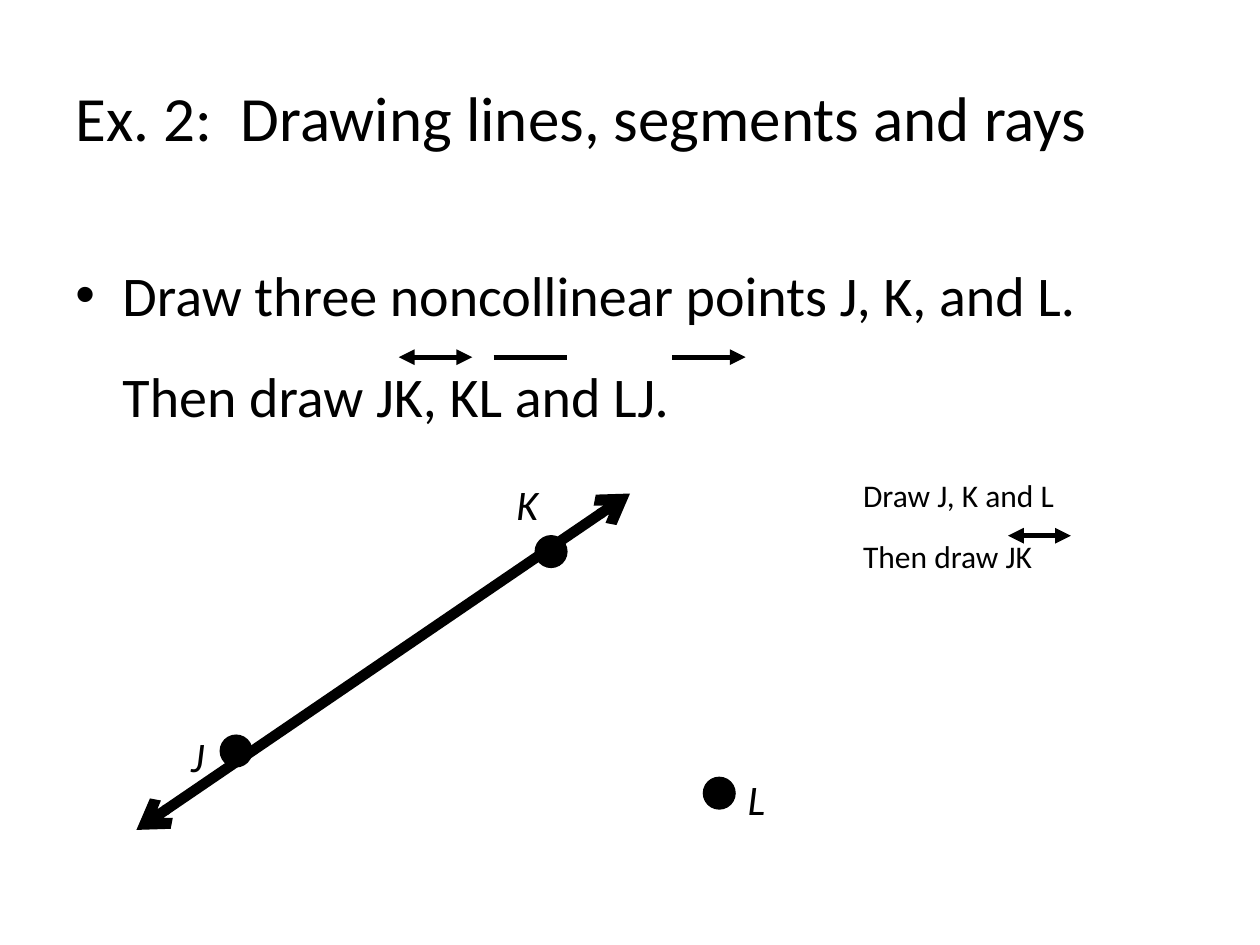
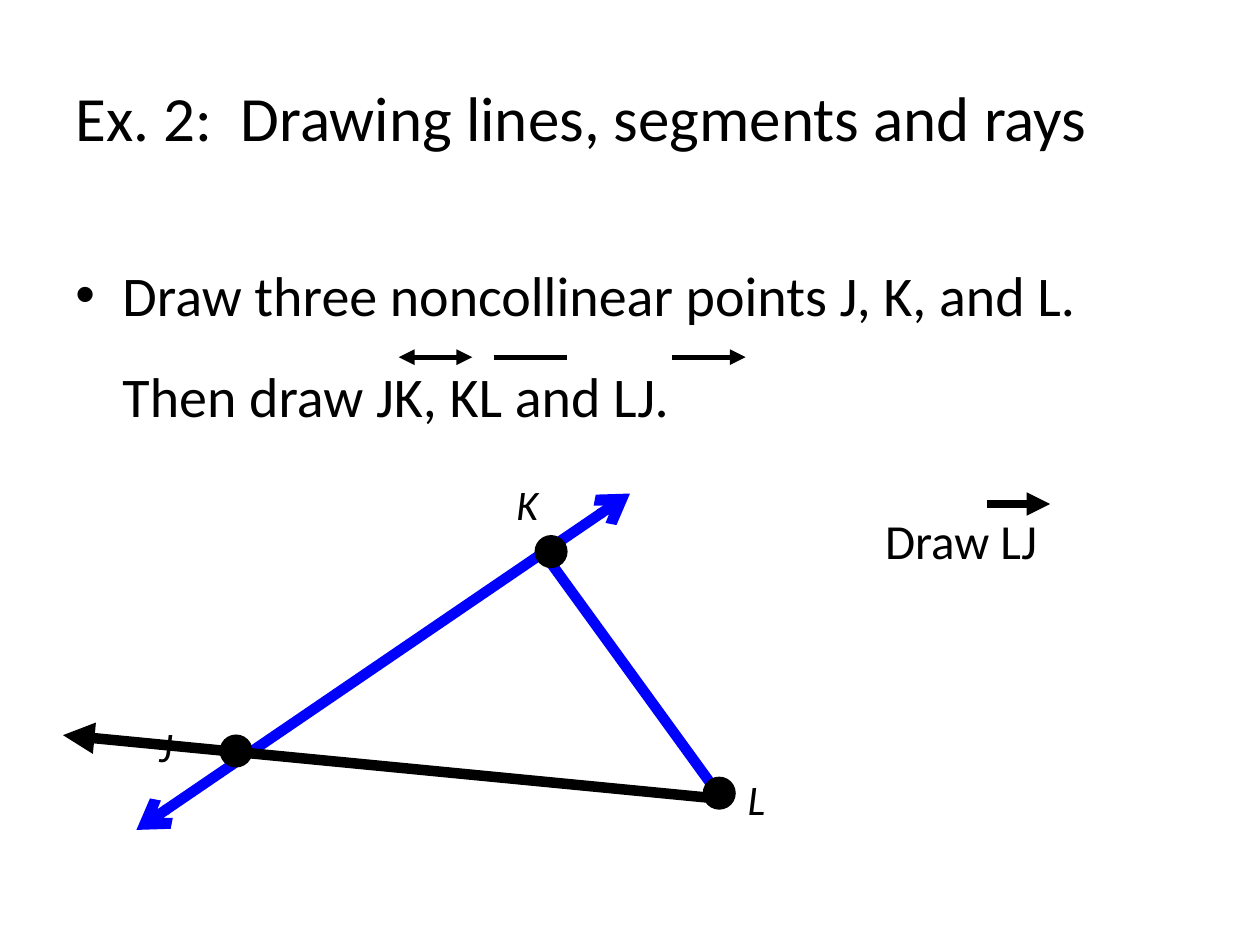
from lxml import etree
from pptx import Presentation
from pptx import util as u
from pptx.dml.color import RGBColor
from pptx.enum import shapes, text
from pptx.oxml.ns import qn

COLORS = {"ink": "000000", "done": "0000FF"}
FONT = "Calibri"
TITLE = "Ex. 2:  Drawing lines, segments and rays"
PROMPT = "Draw three noncollinear points J, K, and L.  Then draw JK, KL and LJ."

# Boxes: left, top, width, height in cm
TITLE_BOX = (1.27, 0.76, 22.86, 3.18)
PROMPT_BOX = (1.27, 4.45, 22.86, 12.57)
FIGURE_BOX = (1.27, 9.53, 13.97, 7.2)
STEP_JK_BOX = (17.15, 9.31, 7.62, 2.46)
STEP_LJ_BOX = (15.03, 10.16, 8.69, 1.45)

# Figure geometry, relative to FIGURE_BOX
DOT = 0.64
LABEL_SIZE = 1.27
POINTS = {"J": (3.49, 5.61), "K": (9.84, 1.59), "L": (13.23, 6.46)}
LABELS = {"K": (8.89, 0), "L": (13.55, 5.93)}
LINE_JK = ((1.48, 7.2), (11.43, 0.42))
SEGMENT_KL = ((9.74, 1.69), (13.12, 6.35))
RAY_LJ = ((13.12, 6.56), (0, 5.29))


def rgb(name):
    return RGBColor.from_string(COLORS[name])


def add_text(slide, box, paragraphs, size, before=0, spacing=None, italic=False,
             align=text.PP_ALIGN.LEFT, anchor=text.MSO_ANCHOR.TOP):
    """Text box; before is the space above as a percentage of the line."""
    sp = slide.shapes.add_textbox(*(u.Cm(v) for v in box))
    tf = sp.text_frame
    tf.word_wrap = True
    tf.vertical_anchor = anchor
    for i, words in enumerate(paragraphs):
        p = tf.add_paragraph() if i else tf.paragraphs[0]
        p.alignment = align
        if spacing:
            p.line_spacing = spacing
        if before:
            p.space_before = u.Pt(0)
            gap = p._p.pPr.find(qn("a:spcBef"))
            gap.remove(gap[0])
            etree.SubElement(gap, qn("a:spcPct"), val=str(before * 1000))
        r = p.add_run()
        r.text = words
        r.font.name, r.font.size, r.font.italic = FONT, u.Pt(size), italic
        r.font.color.rgb = rgb("ink")
    return tf


def add_line(slide, box, start, end, width, color="ink", head=None, tail=None):
    """Line between two points given relative to the box."""
    x, y = box[:2]
    ends = (x + start[0], y + start[1], x + end[0], y + end[1])
    sp = slide.shapes.add_connector(shapes.MSO_CONNECTOR.STRAIGHT,
                                    *(u.Cm(v) for v in ends))
    sp.line.color.rgb = rgb(color)
    sp.line.width = u.Pt(width)
    ln = sp.line._get_or_add_ln()
    for tag, kind in (("a:headEnd", head), ("a:tailEnd", tail)):
        if kind:
            etree.SubElement(ln, qn(tag), type=kind)
    etree.SubElement(sp._element.spPr, qn("a:effectLst"))


def add_mark(slide, box, left, top, length, width, head=None, tail=None):
    """Line, segment or ray symbol above a pair of letters."""
    add_line(slide, box, (left, top), (left + length, top), width,
             head=head, tail=tail)


def add_title(slide, box):
    add_text(slide, box, [TITLE], 36, anchor=text.MSO_ANCHOR.MIDDLE)


def add_prompt(slide, box):
    tf = add_text(slide, box, [PROMPT], 32, before=20, spacing=1.5)
    # Bullet with hanging indent
    pPr = tf.paragraphs[0]._p.pPr
    pPr.set("marL", str(u.Cm(0.95)))
    pPr.set("indent", str(-u.Cm(0.95)))
    etree.SubElement(pPr, qn("a:buFont"), typeface="Arial")
    etree.SubElement(pPr, qn("a:buChar"), char="•")
    # Symbols over JK, KL and LJ
    for left, head, tail in ((6.77, "triangle", "triangle"),
                             (8.68, None, None),
                             (12.28, None, "triangle")):
        add_mark(slide, box, left, 2.75, 1.48, 3, head, tail)


def add_figure(slide, box, j_label, jk_color, finished=False):
    # Point labels
    for name, (x, y) in {"J": j_label, **LABELS}.items():
        label_box = (box[0] + x, box[1] + y, LABEL_SIZE, LABEL_SIZE)
        add_text(slide, label_box, [name], 24, before=50, italic=True)
    # Line, segment and ray
    add_line(slide, box, *LINE_JK, 6, jk_color, head="arrow", tail="arrow")
    if finished:
        add_line(slide, box, *SEGMENT_KL, 6, "done")
        add_line(slide, box, *RAY_LJ, 6, tail="triangle")
    # Points
    for x, y in POINTS.values():
        sp = slide.shapes.add_shape(
            shapes.MSO_SHAPE.OVAL, u.Cm(box[0] + x - DOT / 2),
            u.Cm(box[1] + y - DOT / 2), u.Cm(DOT), u.Cm(DOT))
        sp.shadow.inherit = False
        sp.fill.solid()
        sp.fill.fore_color.rgb = sp.line.color.rgb = rgb("ink")
        sp.line.width = u.Pt(0.75)


def add_step_jk(slide, box):
    add_text(slide, box, ["Draw J, K and L", "Then draw JK"], 18,
             before=50, spacing=1.2)
    add_mark(slide, box, 3.17, 1.49, 1.27, 3, "triangle", "triangle")


def add_step_lj(slide, box):
    add_text(slide, box, ["Draw LJ"], 28, before=50, align=text.PP_ALIGN.CENTER)
    add_mark(slide, box, 4.87, 0, 1.27, 4.5, tail="triangle")


def add_example_slide(prs):
    slide = prs.slides.add_slide(prs.slide_layouts[6])
    add_title(slide, TITLE_BOX)
    add_prompt(slide, PROMPT_BOX)
    return slide


def main():
    prs = Presentation()
    prs.slide_width, prs.slide_height = u.Cm(25.4), u.Cm(19.05)

    # Line JK
    slide = add_example_slide(prs)
    add_figure(slide, FIGURE_BOX, (2.33, 5.08), "ink")
    add_step_jk(slide, STEP_JK_BOX)

    # Ray LJ, with the earlier steps in blue
    slide = add_example_slide(prs)
    add_figure(slide, FIGURE_BOX, (1.69, 4.87), "done", finished=True)
    add_step_lj(slide, STEP_LJ_BOX)

    prs.save("out.pptx")


if __name__ == "__main__":
    main()
